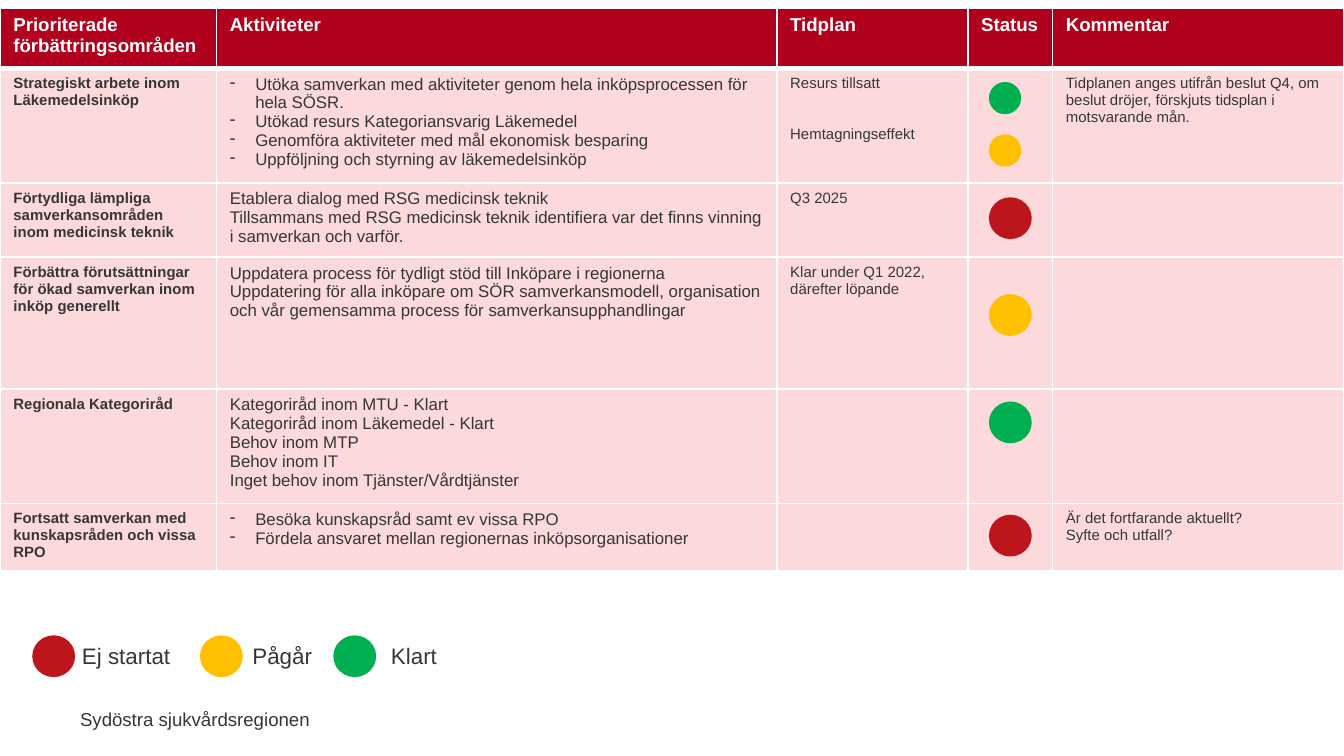
from itertools import accumulate

from lxml import etree
from pptx import Presentation
from pptx.dml.color import RGBColor
from pptx.enum.shapes import MSO_SHAPE
from pptx.enum.text import MSO_AUTO_SIZE, PP_ALIGN
from pptx.oxml.ns import qn
from pptx.util import Cm, Pt

OVAL = MSO_SHAPE.OVAL
LEFT, RIGHT = PP_ALIGN.LEFT, PP_ALIGN.RIGHT
FIT = MSO_AUTO_SIZE.SHAPE_TO_FIT_TEXT

RED, YELLOW, GREEN = "BC151C", "FFC000", "00B050"
HEADER_FILL, ROW_FILL = "B1001E", "FCD9DA"
INK, WHITE = "363636", "FFFFFF"

HEADINGS = ["Prioriterade förbättringsområden", "Aktiviteter", "Tidplan", "Status", "Kommentar"]
AREAS = [
    {
        "area": "Strategiskt arbete inom Läkemedelsinköp",
        "activities": [
            "Utöka samverkan med aktiviteter genom hela inköpsprocessen för hela SÖSR.",
            "Utökad resurs Kategoriansvarig Läkemedel",
            "Genomföra aktiviteter med mål ekonomisk besparing",
            "Uppföljning och styrning av läkemedelsinköp",
        ],
        "dashed": True,
        "schedule": ["Resurs tillsatt", "Hemtagningseffekt"],
        "comment": ["Tidplanen anges utifrån beslut Q4, om beslut dröjer, "
                    "förskjuts tidsplan i motsvarande mån."],
        "status": [(GREEN, 0.26), (YELLOW, 1.25)],
        "height": 2.17,
    },
    {
        "area": "Förtydliga lämpliga samverkansområden inom medicinsk teknik",
        "activities": [
            "Etablera dialog med RSG medicinsk teknik",
            "Tillsammans med RSG medicinsk teknik identifiera var det finns vinning "
            "i samverkan och varför.",
        ],
        "schedule": ["Q3 2025"],
        "status": [(RED, 0.27)],
        "height": 1.4,
    },
    {
        "area": "Förbättra förutsättningar för ökad samverkan inom inköp generellt",
        "activities": [
            "Uppdatera process för tydligt stöd till Inköpare i regionerna",
            "Uppdatering för alla inköpare om SÖR samverkansmodell, organisation "
            "och vår gemensamma process för samverkansupphandlingar",
        ],
        "schedule": ["Klar under Q1 2022, därefter löpande"],
        "status": [(YELLOW, 0.7)],
        "height": 2.49,
    },
    {
        "area": "Regionala Kategoriråd",
        "activities": [
            "Kategoriråd inom MTU - Klart",
            "Kategoriråd inom Läkemedel - Klart",
            "Behov inom MTP",
            "Behov inom IT",
            "Inget behov inom Tjänster/Vårdtjänster",
        ],
        "status": [(GREEN, 0.24)],
        "height": 2.16,
    },
    {
        "area": "Fortsatt samverkan med kunskapsråden och vissa RPO",
        "activities": [
            "Besöka kunskapsråd samt ev vissa RPO",
            "Fördela ansvaret mellan regionernas inköpsorganisationer",
        ],
        "dashed": True,
        "comment": ["Är det fortfarande aktuellt?", "Syfte och utfall?"],
        "status": [(RED, 0.22)],
        "height": 1.27,
    },
]
LEGEND = [
    ("Ej startat", RED, 0.61, 1.3, 2.21),
    ("Pågår", YELLOW, 3.78, 4.52, 3.81),
    ("Klart", GREEN, 6.3, 7.14, 2.77),
]
FOOTER = "Sydöstra sjukvårdsregionen"

COLUMN_WIDTHS = [4.09, 10.59, 3.61, 1.6, 5.51]
TABLE_TOP, HEADER_HEIGHT = 0.15, 1.14
STATUS_LEFT, LEGEND_TOP = 18.69, 12.01
DOT, SMALL_DOT = (0.81, 0.79), (0.61, 0.61)
DASH_INDENT = Cm(0.48)

HEADER_FONT = {"name": "Arial", "size": Pt(10), "bold": True}
AREA_FONT = {"name": "Arial", "size": Pt(8), "bold": True}
ACTIVITY_FONT = {"name": "Arial", "size": Pt(9), "bold": False}
DETAIL_FONT = {"name": "Arial", "size": Pt(8), "bold": False}
LEGEND_FONT = {"name": "Arial", "size": Pt(12)}
FOOTER_FONT = {"name": "Arial", "size": Pt(10)}


def rgb(value):
    return RGBColor.from_string(value)


def write(frame, lines, font, color=INK, align=LEFT, dashed=False, gap=0):
    for index, line in enumerate(lines):
        paragraph = frame.paragraphs[0] if index == 0 else frame.add_paragraph()
        paragraph.text = line
        paragraph.alignment = align
        if index and gap:
            paragraph.space_before = Pt(gap)
        if dashed:
            properties = paragraph._p.get_or_add_pPr()
            properties.set("marL", str(DASH_INDENT))
            properties.set("indent", str(-DASH_INDENT))
            etree.SubElement(properties, qn("a:buChar"), char="-")
        for run in paragraph.runs:
            for key, value in font.items():
                setattr(run.font, key, value)
            run.font.color.rgb = rgb(color)


def style_cell(cell, fill, top, bottom):
    properties = cell._tc.get_or_add_tcPr()
    for side, width in (("L", 1), ("R", 1), ("T", top), ("B", bottom)):
        border = etree.SubElement(properties, qn("a:ln" + side), w=str(Pt(width)))
        solid = etree.SubElement(border, qn("a:solidFill"))
        etree.SubElement(solid, qn("a:srgbClr"), val=WHITE)
    cell.fill.solid()
    cell.fill.fore_color.rgb = rgb(fill)


def add_dot(slide, color, left, top, size=DOT):
    dot = slide.shapes.add_shape(OVAL, Cm(left), Cm(top), *map(Cm, size))
    dot.shadow.inherit = False
    dot.fill.solid()
    dot.fill.fore_color.rgb = rgb(color)
    dot.line.fill.background()


def add_label(slide, text, box, font, align=LEFT, wrap=True):
    frame = slide.shapes.add_textbox(*map(Cm, box)).text_frame
    frame.word_wrap = wrap
    frame.auto_size = FIT
    write(frame, [text], font, align=align)


def add_plan(slide, heights):
    table = slide.shapes.add_table(
        len(heights), len(HEADINGS), Cm(0), Cm(TABLE_TOP),
        Cm(sum(COLUMN_WIDTHS)), Cm(sum(heights))).table
    for column, width in zip(table.columns, COLUMN_WIDTHS):
        column.width = Cm(width)
    for row, height in zip(table.rows, heights):
        row.height = Cm(height)
    for column, heading in enumerate(HEADINGS):
        style_cell(table.cell(0, column), HEADER_FILL, 1, 3)
        write(table.cell(0, column).text_frame, [heading], HEADER_FONT, WHITE)
    for row, area in enumerate(AREAS, 1):
        for cell in table.rows[row].cells:
            style_cell(cell, ROW_FILL, 3 if row == 1 else 1, 1)
        name, activities, schedule, _, comment = [c.text_frame for c in table.rows[row].cells]
        write(name, [area["area"]], AREA_FONT)
        write(activities, area["activities"], ACTIVITY_FONT, dashed=area.get("dashed", False))
        write(schedule, area.get("schedule", []), DETAIL_FONT, gap=18.4)
        write(comment, area.get("comment", []), DETAIL_FONT)


def main():
    deck = Presentation()
    deck.slide_width, deck.slide_height = Cm(25.4), Cm(14.29)
    slide = deck.slides.add_slide(deck.slide_layouts[6])

    add_label(slide, FOOTER, (1.22, 13.26, 4.88, 0.69), FOOTER_FONT, RIGHT, wrap=False)
    heights = [HEADER_HEIGHT] + [area["height"] for area in AREAS]
    add_plan(slide, heights)

    row_tops = list(accumulate(heights, initial=TABLE_TOP))[1:]
    for area, row_top in zip(AREAS, row_tops):
        size = SMALL_DOT if len(area["status"]) > 1 else DOT
        for color, offset in area["status"]:
            add_dot(slide, color, STATUS_LEFT, row_top + offset, size)

    for text, color, dot_left, text_left, width in LEGEND:
        add_dot(slide, color, dot_left, LEGEND_TOP)
        add_label(slide, text, (text_left, LEGEND_TOP, width, 0.76), LEGEND_FONT)
    deck.save("out.pptx")


if __name__ == "__main__":
    main()
